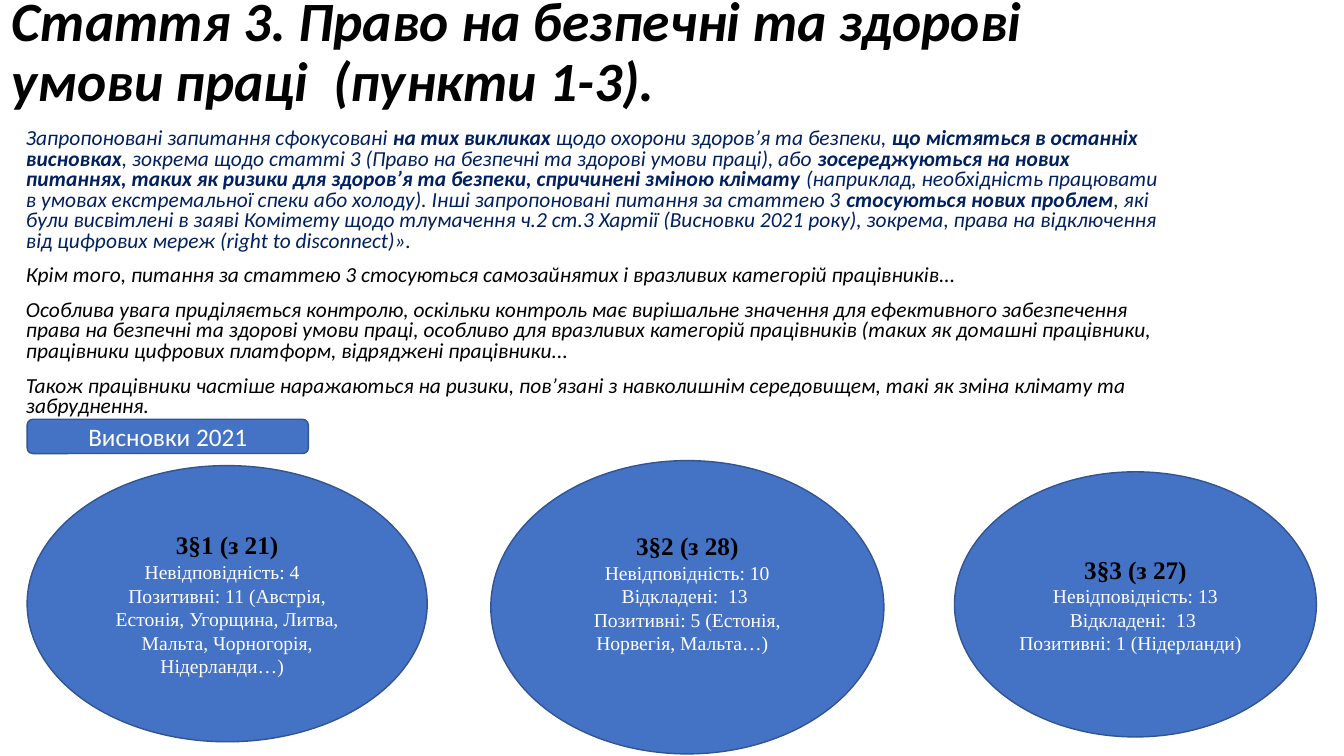
from pptx import Presentation
from pptx.dml.color import RGBColor
from pptx.enum.shapes import MSO_SHAPE
from pptx.enum.text import MSO_ANCHOR, PP_ALIGN
from pptx.util import Pt

ELLIPSE = MSO_SHAPE.OVAL
ROUNDED = MSO_SHAPE.ROUNDED_RECTANGLE
TOP, MIDDLE = MSO_ANCHOR.TOP, MSO_ANCHOR.MIDDLE
LEFT, CENTER = PP_ALIGN.LEFT, PP_ALIGN.CENTER

COLORS = {"black": "000000", "white": "FFFFFF", "navy": "002060",
          "blue": "4472C4", "outline": "325491"}
SANS, SERIF = "Calibri", "Times New Roman"


class SlideBuilder:
    """Holds the style and the current slide; lengths are in points."""

    def __init__(self, slide):
        self.slide = slide

    def color(self, name):
        return RGBColor.from_string(COLORS[name])

    def frame(self, shape, anchor):
        frame = shape.text_frame
        frame.word_wrap = True
        frame.vertical_anchor = anchor
        return frame

    def text_box(self, left, top, width, height, anchor=TOP):
        box = self.slide.shapes.add_textbox(Pt(left), Pt(top), Pt(width), Pt(height))
        return self.frame(box, anchor)

    def filled_shape(self, kind, left, top, width, height):
        shape = self.slide.shapes.add_shape(kind, Pt(left), Pt(top), Pt(width), Pt(height))
        shape.shadow.inherit = False
        shape.fill.solid()
        shape.fill.fore_color.rgb = self.color("blue")
        shape.line.color.rgb = self.color("outline")
        shape.line.width = Pt(1)
        return self.frame(shape, MIDDLE)

    def paragraph(self, frame, align=LEFT, line_spacing=1.0, before=0):
        first = frame.paragraphs[0]
        para = frame.add_paragraph() if first.runs else first
        para.alignment = align
        para.line_spacing = line_spacing
        para.space_before = Pt(before)
        return para

    def span(self, para, text, size, color, font=SANS, bold=False, italic=False):
        span = para.add_run()
        span.text = text
        span.font.size = Pt(size)
        span.font.name = font
        span.font.bold = bold
        span.font.italic = italic
        span.font.color.rgb = self.color(color)


TITLE = "Стаття 3. Право на безпечні та здорові умови праці  (пункти 1-3)."

# Plain and bold spans alternate, starting with plain
QUESTIONS = [
    "Запропоновані запитання сфокусовані ",
    "на тих викликах ",
    "щодо охорони здоров’я та безпеки, ",
    "що містяться в останніх висновках",
    ", зокрема щодо статті 3 (Право на безпечні та здорові умови праці), або ",
    "зосереджуються на нових питаннях, таких як ризики для здоров’я та безпеки, "
    "спричинені зміною клімату ",
    "(наприклад, необхідність працювати в умовах екстремальної спеки або холоду). "
    "Інші запропоновані питання за статтею 3 ",
    "стосуються нових проблем",
    ", які були висвітлені в заяві Комітету щодо тлумачення ч.2 ст.3 Хартії "
    "(Висновки 2021 року), зокрема, права на відключення від цифрових мереж "
    "(right to disconnect)».",
]
REMARKS = [
    "Крім того, питання за статтею 3 стосуються самозайнятих і вразливих категорій "
    "працівників...",
    "Особлива увага приділяється контролю, оскільки контроль має вирішальне значення "
    "для ефективного забезпечення права на безпечні та здорові умови праці, особливо "
    "для вразливих категорій працівників (таких як домашні працівники, працівники "
    "цифрових платформ, відряджені працівники...",
    "Також працівники частіше наражаються на ризики, пов’язані з навколишнім "
    "середовищем, такі як зміна клімату та забруднення.",
]

# Position and size, extra space under the text, heading, lines
CONCLUSIONS = [
    ((19.4, 332.6, 285.8, 197.3), 0, "3§1 (з 21)", [
        "Невідповідність: 4  ",
        "Позитивні: 11 (Австрія, Естонія, Угорщина, Литва, Мальта, Чорногорія, "
        "Нідерланди…)  "]),
    ((350.6, 329, 280.8, 209.5), 20.7, "3§2 (з 28)", [
        "Невідповідність: 10", "Відкладені:  13 ",
        "Позитивні: 5 (Естонія, Норвегія, Мальта…)  "]),
    ((681.8, 337, 258.5, 189.4), 0, "3§3 (з 27)", [
        "Невідповідність: 13", "Відкладені:  13 ",
        "Позитивні: 1 (Нідерланди)  "]),
]


def main():
    deck = Presentation()
    deck.slide_width, deck.slide_height = Pt(960), Pt(540)
    page = SlideBuilder(deck.slides.add_slide(deck.slide_layouts[6]))

    # Title
    title = page.text_box(1.4, 1.4, 828, 73.4, MIDDLE)
    para = page.paragraph(title, line_spacing=0.9)
    page.span(para, TITLE, 39.6, "black", bold=True, italic=True)

    # Body text
    body = page.text_box(11.5, 88.6, 828, 216.7)
    para = page.paragraph(body, line_spacing=0.8, before=10)
    for index, text in enumerate(QUESTIONS):
        page.span(para, text, 15.3, "navy", bold=index % 2 == 1, italic=True)
    for text in REMARKS:
        para = page.paragraph(body, line_spacing=0.8, before=10)
        page.span(para, text, 15.3, "black", italic=True)

    # Conclusions on each paragraph of the article
    for place, extra, heading, lines in CONCLUSIONS:
        ellipse = page.filled_shape(ELLIPSE, *place)
        ellipse.margin_bottom = Pt(3.6 + extra)
        page.span(page.paragraph(ellipse, CENTER), heading, 18, "black", SERIF, bold=True)
        for line in lines:
            page.span(page.paragraph(ellipse, CENTER), line, 14, "white", SERIF)

    # Label above the ellipses
    label = page.filled_shape(ROUNDED, 19.4, 299.5, 200.9, 24.5)
    page.span(page.paragraph(label, CENTER), "Висновки 2021", 18, "white")

    deck.save("out.pptx")


if __name__ == "__main__":
    main()
